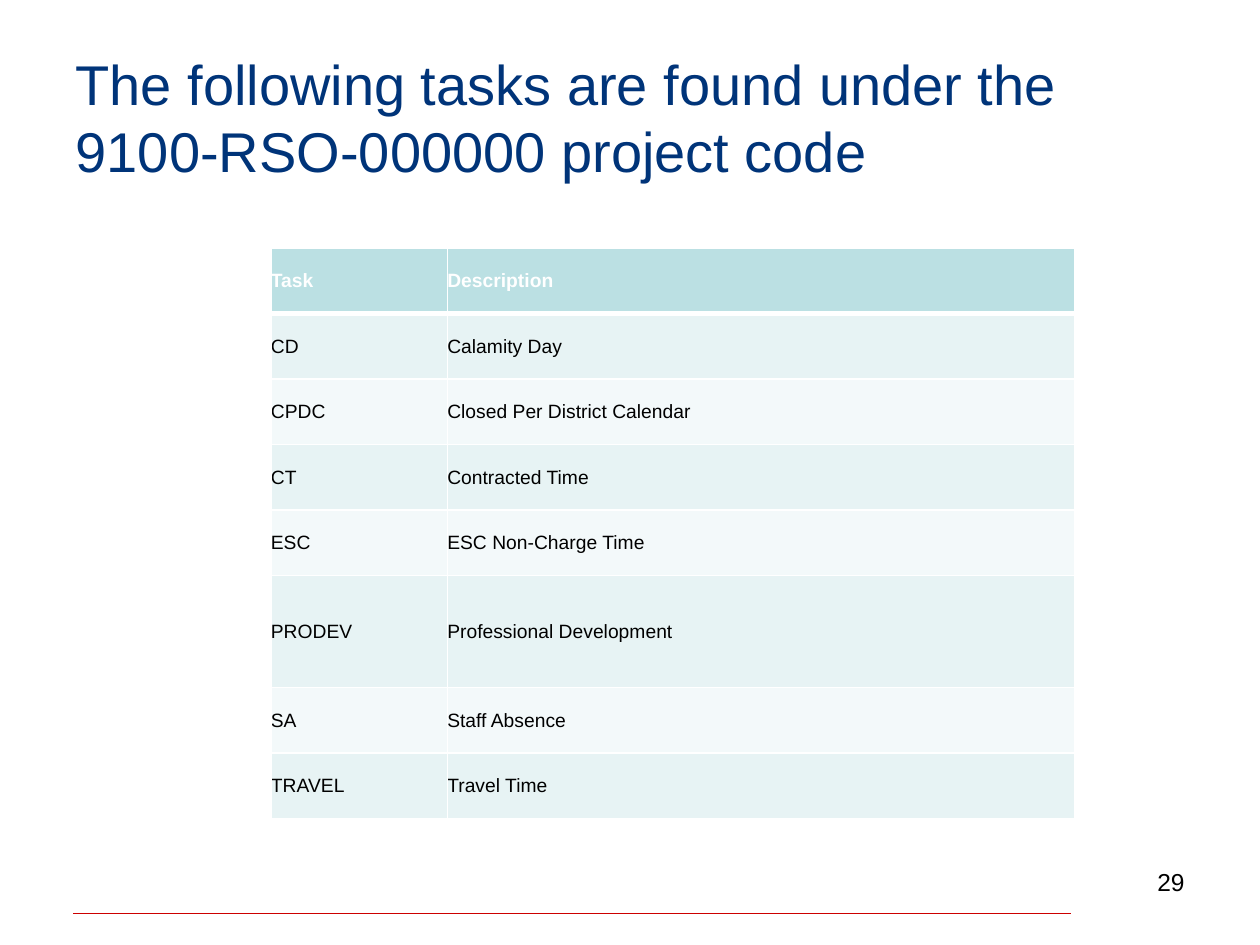
from lxml.etree import SubElement
from pptx import Presentation
from pptx.dml.color import RGBColor
from pptx.enum.shapes import MSO_CONNECTOR
from pptx.enum.text import MSO_ANCHOR, PP_ALIGN
from pptx.oxml import parse_xml
from pptx.oxml.ns import nsdecls, qn
from pptx.util import Inches, Pt

COLORS = {
    "title": "003479",
    "text": "000000",
    "white": "FFFFFF",
    "header": "BBE0E3",
    "odd_row": "E7F3F4",
    "even_row": "F3F9FA",
    "rule": "CC0000",
}

TASKS = [
    ("Task", "Description"),
    ("CD", "Calamity Day"),
    ("CPDC", "Closed Per District Calendar"),
    ("CT", "Contracted Time"),
    ("ESC", "ESC Non-Charge Time"),
    ("PRODEV", "Professional Development"),
    ("SA", "Staff Absence"),
    ("TRAVEL", "Travel Time"),
]
COLUMN_WIDTHS = [1.4, 4.98]
ROW_HEIGHT = 0.52
TALL_ROWS = {"PRODEV": 0.89}


class SlideBuilder:
    font_name = "Arial"

    def __init__(self, slide):
        self.slide = slide

    def color(self, name):
        return RGBColor.from_string(COLORS[name])

    def add_text(self, paragraph, text, size, color, bold=False, align=PP_ALIGN.LEFT):
        paragraph.alignment = align
        run = paragraph.add_run()
        run.text = text
        run.font.name = self.font_name
        run.font.size = Pt(size)
        run.font.bold = bold
        run.font.color.rgb = self.color(color)

    def title(self, text, left, top, width, height):
        shape = self.slide.shapes.title
        shape.left, shape.top = Inches(left), Inches(top)
        shape.width, shape.height = Inches(width), Inches(height)
        shape.text_frame.vertical_anchor = MSO_ANCHOR.MIDDLE
        self.add_text(shape.text_frame.paragraphs[0], text, 32, "title")

    def rule(self, left, right, y):
        connector = self.slide.shapes.add_connector(
            MSO_CONNECTOR.STRAIGHT, Inches(left), Inches(y), Inches(right), Inches(y)
        )
        connector.line.color.rgb = self.color("rule")
        connector.line.width = Pt(0.75)
        SubElement(connector._element.spPr, qn("a:effectLst"))

    def page_number(self, text, left, top, width, height):
        shape = self.slide.shapes.add_textbox(
            Inches(left), Inches(top), Inches(width), Inches(height)
        )
        shape.text_frame.word_wrap = True
        self.add_text(shape.text_frame.paragraphs[0], text, 14, "text", align=PP_ALIGN.RIGHT)

    def borders(self, cell, widths):
        properties = cell._tc.get_or_add_tcPr()
        for index, (side, width) in enumerate(widths.items()):
            properties.insert(index, parse_xml(
                f'<a:ln{side} {nsdecls("a")} w="{Pt(width)}"><a:solidFill>'
                f'<a:srgbClr val="{COLORS["white"]}"/></a:solidFill></a:ln{side}>'
            ))

    def cell(self, cell, text, row):
        header = row == 0
        fill = "header" if header else ("odd_row" if row % 2 else "even_row")
        cell.fill.solid()
        cell.fill.fore_color.rgb = self.color(fill)
        cell.vertical_anchor = MSO_ANCHOR.MIDDLE
        cell.margin_left = cell.margin_right = cell.margin_top = cell.margin_bottom = 0
        self.borders(cell, {
            "L": 1, "R": 1, "T": 3 if row == 1 else 1, "B": 3 if header else 1,
        })
        color = "white" if header else "text"
        self.add_text(cell.text_frame.paragraphs[0], text, 11, color, bold=header)

    def table(self, rows, left, top):
        heights = [TALL_ROWS.get(task, ROW_HEIGHT) for task, _ in rows]
        table = self.slide.shapes.add_table(
            len(rows), len(COLUMN_WIDTHS), Inches(left), Inches(top),
            Inches(sum(COLUMN_WIDTHS)), Inches(sum(heights)),
        ).table
        for column, width in zip(table.columns, COLUMN_WIDTHS):
            column.width = Inches(width)
        for row, (values, height) in enumerate(zip(rows, heights)):
            table.rows[row].height = Inches(height)
            for column, text in enumerate(values):
                self.cell(table.cell(row, column), text, row)


def main():
    presentation = Presentation()
    presentation.slide_width = Inches(10)
    presentation.slide_height = Inches(7.5)
    slide = presentation.slides.add_slide(presentation.slide_layouts[5])
    builder = SlideBuilder(slide)
    builder.rule(0.58, 8.5, 7.25)
    builder.title(
        "The following tasks are found under the 9100-RSO-000000 project code",
        0.5, 0.3, 9, 1.25,
    )
    builder.table(TASKS, 2.15, 1.97)
    builder.page_number("29", 7.17, 6.83, 2.33, 0.52)
    presentation.save("out.pptx")


if __name__ == "__main__":
    main()
